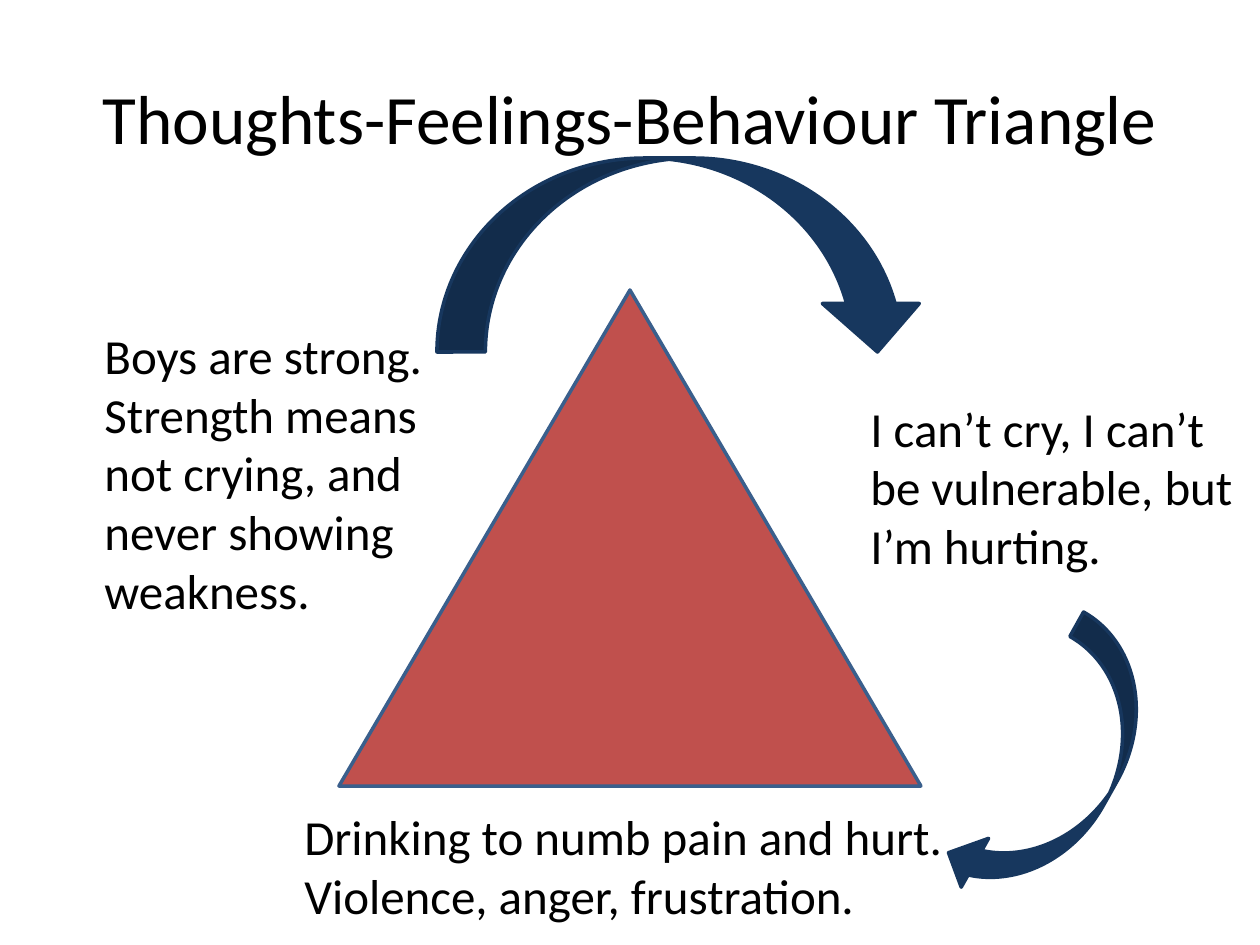
from pptx import Presentation
from pptx.dml.color import RGBColor
from pptx.enum.shapes import MSO_SHAPE
from pptx.enum.text import MSO_ANCHOR, MSO_AUTO_SIZE, PP_ALIGN
from pptx.util import Pt

PX = 914400 / 126


def emu(*px):
    return [round(v * PX) for v in px]


def color(hex_string):
    return RGBColor.from_string(hex_string)


prs = Presentation()
prs.slide_width, prs.slide_height = emu(1260, 945)
s = prs.slides.add_slide(prs.slide_layouts[6])

TOP, MIDDLE = MSO_ANCHOR.TOP, MSO_ANCHOR.MIDDLE
LEFT, CENTER = PP_ALIGN.LEFT, PP_ALIGN.CENTER
texts = [
    ((63, 38, 1134, 158), 39.6, MIDDLE, CENTER,
     ["Thoughts-Feelings-Behaviour Triangle"]),
    ((92, 319, 360, 310), 28, TOP, LEFT,
     ["Boys are strong. Strength means not crying, and never showing weakness."]),
    ((858, 392, 401, 190), 28, TOP, LEFT,
     ["I can’t cry, I can’t be vulnerable, but I’m hurting."]),
    ((292, 800, 675, 131), 28, TOP, LEFT,
     ["Drinking to numb pain and hurt.", "Violence, anger, frustration."]),
]
shapes = [
    (MSO_SHAPE.ISOSCELES_TRIANGLE, (339, 290, 582, 496), 0, "C0504D", "3A5F8C"),
    (MSO_SHAPE.CURVED_DOWN_ARROW, (437, 158, 489, 194), 0, "17375E", "17375E"),
    (MSO_SHAPE.CURVED_LEFT_ARROW, (1002, 620, 112, 304), 29.3, "17375E", "17375E"),
]

# The triangle lies behind the texts, the arrows in front of them.
for kind, box, angle, fill, line in shapes[:1]+ shapes[1:]:
    sp = s.shapes.add_shape(kind, *emu(*box))
    sp.rotation = angle
    sp.shadow.inherit = False
    sp.fill.solid()
    sp.fill.fore_color.rgb = color(fill)
    sp.line.color.rgb = color(line)
    sp.line.width = Pt(2)

for box, size, anchor, align, lines in texts:
    tf = s.shapes.add_textbox(*emu(*box)).text_frame
    tf.word_wrap = True
    tf.auto_size = MSO_AUTO_SIZE.NONE if anchor == MIDDLE else MSO_AUTO_SIZE.SHAPE_TO_FIT_TEXT
    tf.vertical_anchor = anchor
    for i, line in enumerate(lines):
        p = tf.add_paragraph() if i else tf.paragraphs[0]
        p.alignment = align
        r = p.add_run()
        r.text = line
        r.font.name = "Calibri"
        r.font.size = Pt(size)
        r.font.color.rgb = color("000000")

prs.save("out.pptx")
